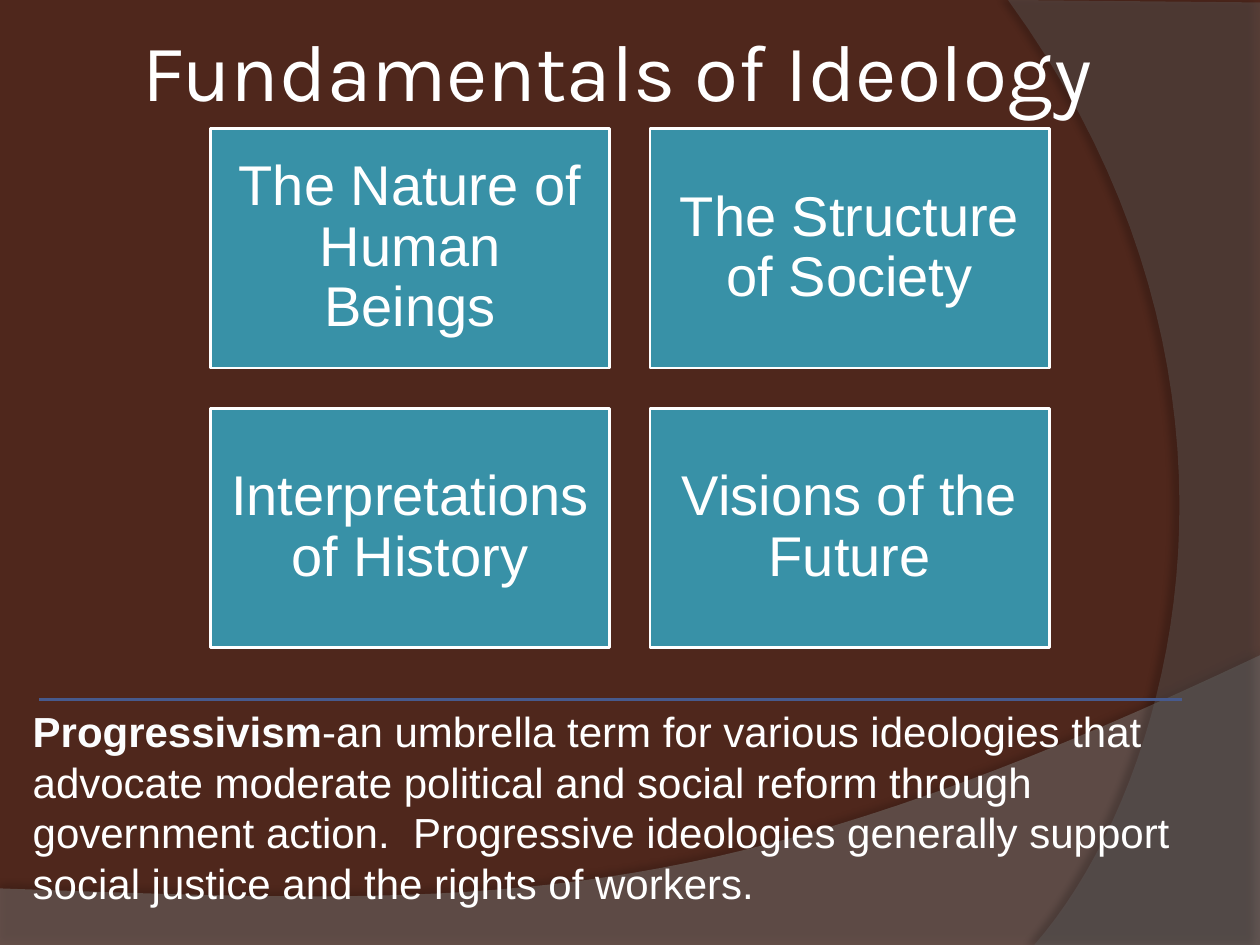
from lxml import etree
from pptx import Presentation
from pptx.dml.color import RGBColor
from pptx.enum.shapes import MSO_CONNECTOR, MSO_SHAPE
from pptx.enum.text import MSO_ANCHOR, PP_ALIGN
from pptx.oxml import parse_xml
from pptx.oxml.ns import nsdecls, qn
from pptx.util import Cm, Pt

RECTANGLE, STRAIGHT = MSO_SHAPE.RECTANGLE, MSO_CONNECTOR.STRAIGHT
LEFT, CENTER = PP_ALIGN.LEFT, PP_ALIGN.CENTER
TOP, MIDDLE = MSO_ANCHOR.TOP, MSO_ANCHOR.MIDDLE

COLORS = {
    "background": "4F271C", "wave": "7F7F7F", "arc": "5E5E5E", "box": "3891A7",
    "text": "FFFFFF", "term": "FCFDFE", "rule": "475A8D", "shadow": "000000",
}
TITLE = "Fundamentals of Ideology"
FUNDAMENTALS = [
    ["The Nature of Human Beings", "The Structure of Society"],
    ["Interpretations of History", "Visions of the Future"],
]
DEFINITION = [
    ("Progressivism", True, "term"),
    ("-an umbrella term for various ideologies that advocate moderate political "
     "and social reform through government action.  Progressive ideologies "
     "generally support social justice and the rights of workers.", False, "text"),
]
SWEEPS = [
    {"color": "wave", "opacity": 45, "shadow": (35, 4, 3.5, 270),
     "corners": [(0, 17.91), (0, 19.08), (25.4, 19.08), (25.4, 13.21)],
     "curve": [(14.2, 18.52), (9.93, 18.26), (0, 17.91)]},
    {"color": "arc", "opacity": 40, "shadow": (45, 4, 4, 180),
     "corners": [(25.4, 0.05), (25.4, 19.05), (20.85, 19.05)],
     "curve": [(23.75, 15.72), (25.86, 7.62), (20.32, 0)]},
]
SLIDE_W, SLIDE_H = 25.4, 19.05
BOX_W, BOX_H, BOX_GAP, BOX_TOP = 8.05, 4.83, 0.81, 2.59
CURVE_STEPS = 40


def rgb(name):
    return RGBColor.from_string(COLORS[name])


def write(shape, runs, size, font="Arial", align=LEFT, anchor=TOP,
          inset=(0.25, 0.13), spacing=1.0):
    frame = shape.text_frame
    frame.word_wrap = True
    frame.vertical_anchor = anchor
    frame.margin_left = frame.margin_right = Cm(inset[0])
    frame.margin_top = frame.margin_bottom = Cm(inset[1])
    paragraph = frame.paragraphs[0]
    paragraph.alignment = align
    paragraph.line_spacing = spacing
    for text, bold, color in runs:
        run = paragraph.add_run()
        run.text = text
        run.font.name, run.font.size, run.font.bold = font, Pt(size), bold
        run.font.color.rgb = rgb(color)


def bezier(points, t):
    weights = ((1 - t) ** 3, 3 * t * (1 - t) ** 2, 3 * t ** 2 * (1 - t), t ** 3)
    return tuple(sum(w * p[axis] for w, p in zip(weights, points)) for axis in (0, 1))


def add_sweep(shapes, color, opacity, shadow, corners, curve):
    control = [corners[-1], *curve]
    outline = corners + [bezier(control, i / CURVE_STEPS) for i in range(1, CURVE_STEPS + 1)]
    points = [(Cm(x), Cm(y)) for x, y in outline]
    builder = shapes.build_freeform(*points[0])
    builder.add_line_segments(points[1:], close=True)
    sweep = builder.convert_to_shape()
    sweep.fill.solid()
    sweep.fill.fore_color.rgb = rgb(color)
    sweep.line.fill.background()
    fill_color = sweep._element.spPr.find(qn("a:solidFill"))[0]
    etree.SubElement(fill_color, qn("a:alpha")).set("val", str(opacity * 1000))
    shade, blur, distance, angle = shadow
    sweep._element.spPr.append(parse_xml(
        f'<a:effectLst {nsdecls("a")}><a:outerShdw blurRad="{Pt(blur)}" '
        f'dist="{Pt(distance)}" dir="{angle * 60000}" rotWithShape="0">'
        f'<a:srgbClr val="{COLORS["shadow"]}"><a:alpha val="{shade * 1000}"/>'
        '</a:srgbClr></a:outerShdw></a:effectLst>'))


def add_box(shapes, text, left, top):
    box = shapes.add_shape(RECTANGLE, Cm(left), Cm(top), Cm(BOX_W), Cm(BOX_H))
    box.shadow.inherit = False
    box.fill.solid()
    box.fill.fore_color.rgb = rgb("box")
    box.line.color.rgb = rgb("text")
    box.line.width = Pt(1.5)
    write(box, [(text, False, "text")], 32, align=CENTER, anchor=MIDDLE,
          inset=(0.33, 0.33), spacing=0.9)


def main():
    deck = Presentation()
    deck.slide_width, deck.slide_height = Cm(SLIDE_W), Cm(SLIDE_H)
    slide = deck.slides.add_slide(deck.slide_layouts[6])
    slide.background.fill.solid()
    slide.background.fill.fore_color.rgb = rgb("background")
    shapes = slide.shapes

    for sweep in SWEEPS:
        add_sweep(shapes, **sweep)

    title = shapes.add_textbox(Cm(2.06), Cm(-0.2), Cm(20.75), Cm(3.18))
    write(title, [(TITLE, False, "text")], 46, font="Karla", align=CENTER,
          anchor=MIDDLE, inset=(0.13, 0.13))

    grid_left = (SLIDE_W - 2 * BOX_W - BOX_GAP) / 2
    for row, names in enumerate(FUNDAMENTALS):
        for column, name in enumerate(names):
            add_box(shapes, name, grid_left + column * (BOX_W + BOX_GAP),
                    BOX_TOP + row * (BOX_H + BOX_GAP))

    definition = shapes.add_textbox(Cm(0.41), Cm(14.1), Cm(24.61), Cm(4.37))
    write(definition, DEFINITION, 24)

    rule = shapes.add_connector(STRAIGHT, Cm(0.79), Cm(14.1), Cm(23.83), Cm(14.1))
    rule.line.color.rgb = rgb("rule")
    rule.line.width = Pt(1.5)
    etree.SubElement(rule._element.spPr, qn("a:effectLst"))

    deck.save("out.pptx")


if __name__ == "__main__":
    main()
